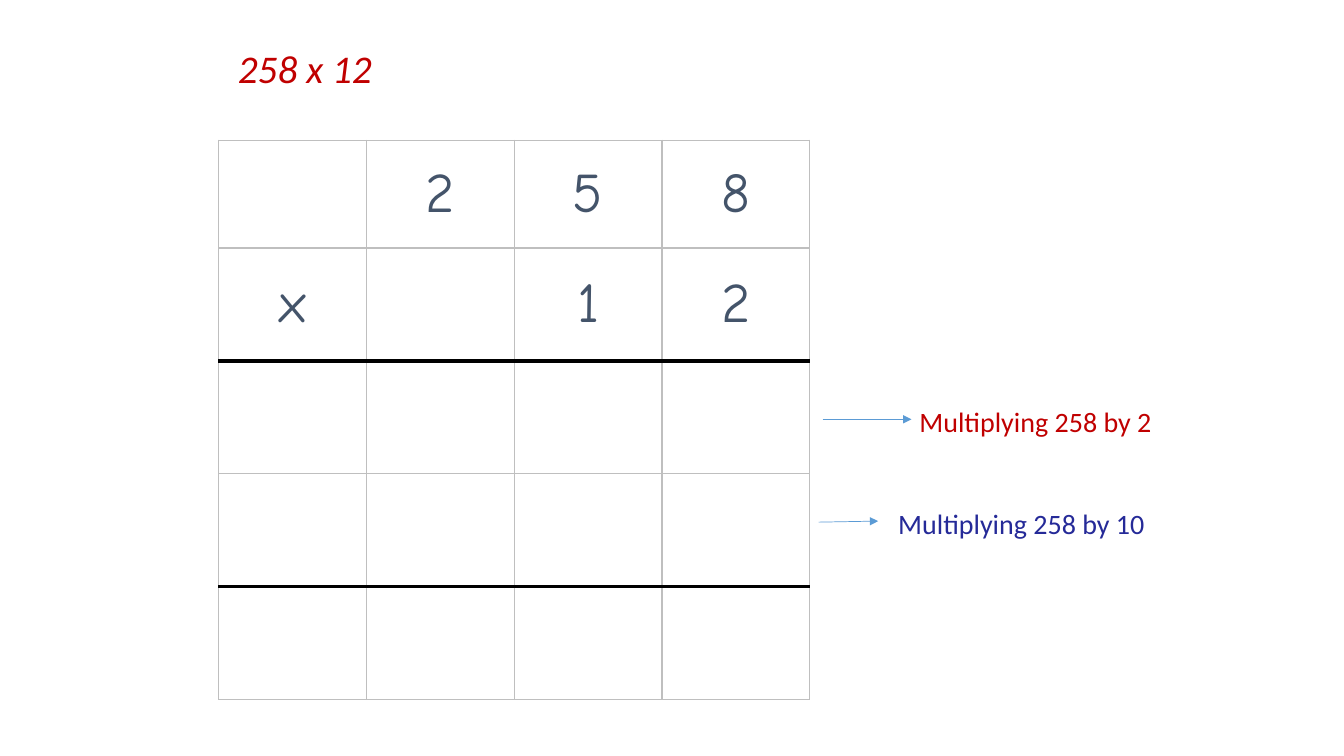
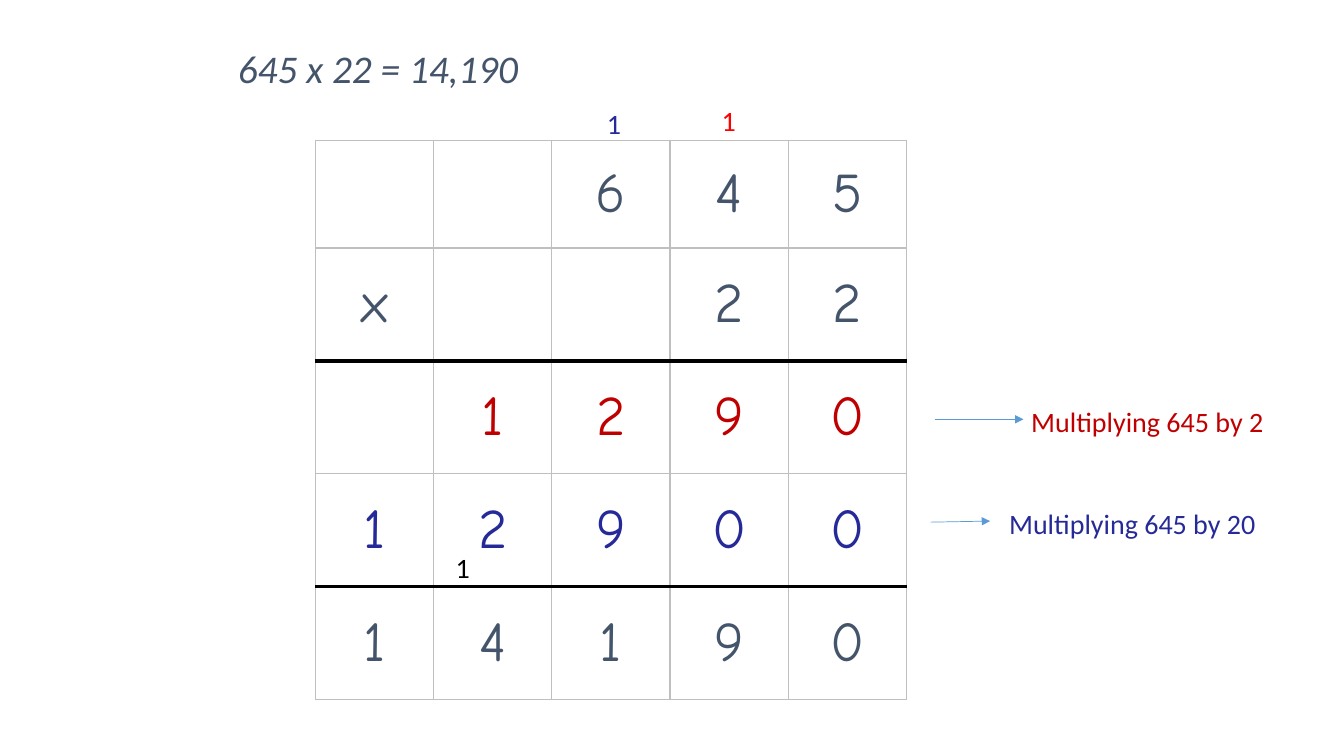
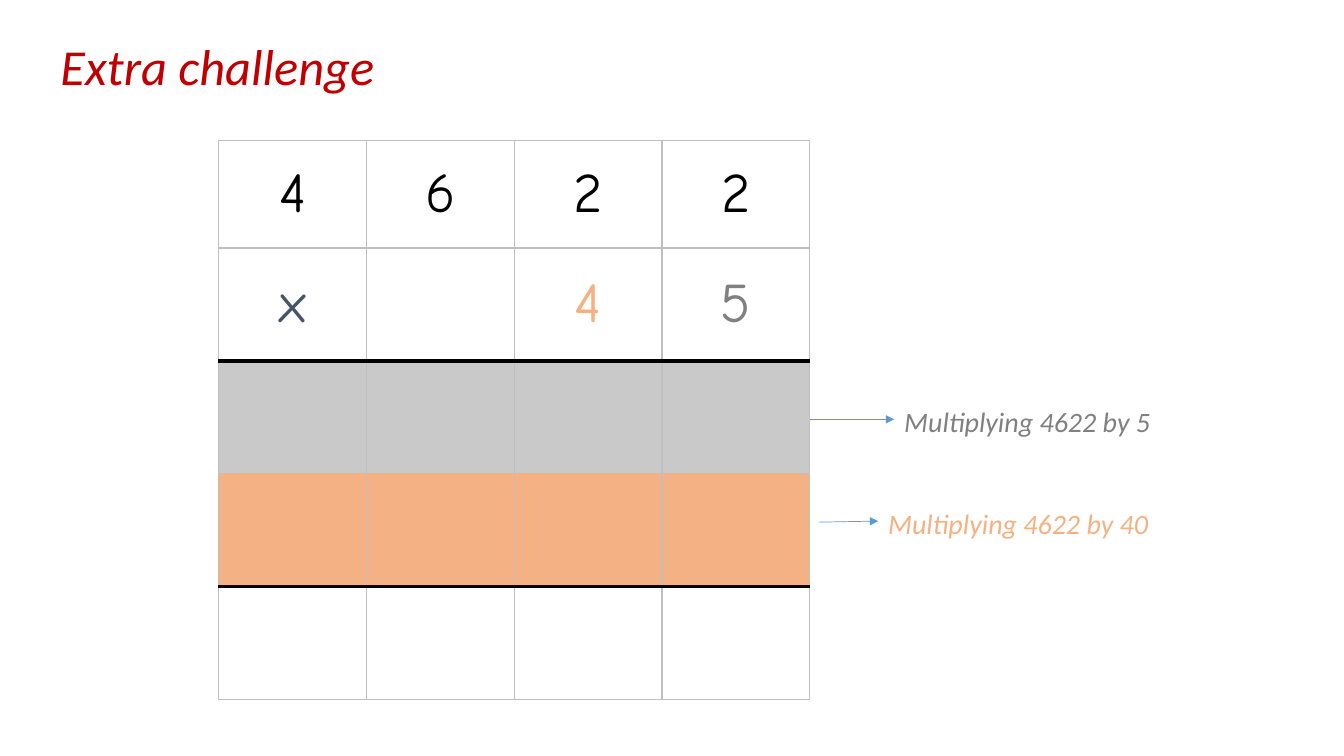
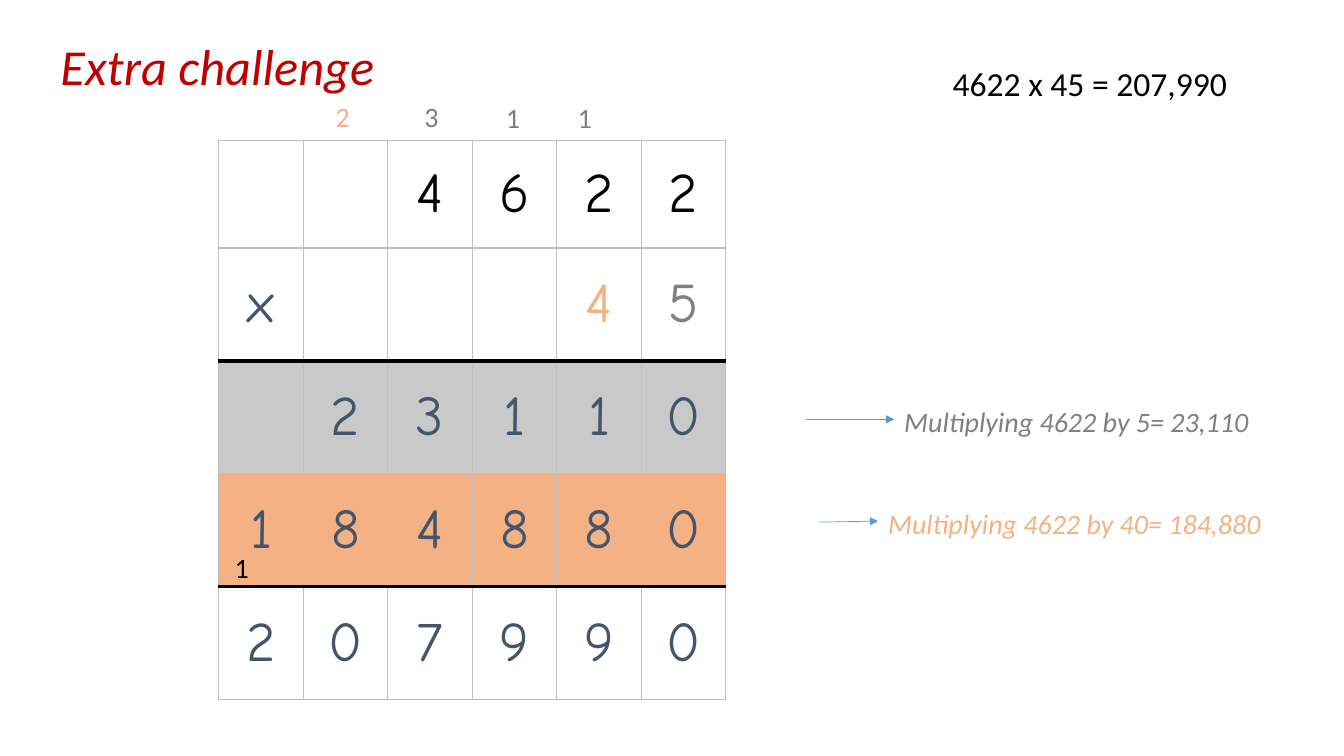
"""Builds four slides of long multiplication worked in grids."""
from lxml import etree
from pptx import Presentation
from pptx import util as u
from pptx.dml import color
from pptx.enum import shapes, text
from pptx.oxml import ns

EMU_PER_PX = 9144
BLACK, SLATE, RED, BRIGHT_RED, BLUE = "000000", "44546A", "C00000", "FF0000", "252A98"
GREY, ORANGE, GREY_FILL, ORANGE_FILL = "808080", "F4B283", "C9C9C9", "F4B183"
GRID, ARROW = "BFBFBF", "5B9BD5"
TEXT_FONT, DIGIT_FONT = "Calibri", "Comic Neue"
TABLE_TOP, ROW_HEIGHTS = 139, (107, 112, 112, 112, 112)
RULED_ROWS = (2, 4)
MULTIPLIER_COLOURS = (SLATE, ORANGE, GREY)


def px(length):
    """Turn px into EMU."""
    return u.Emu(length * EMU_PER_PX)


def rgb(value):
    """Turn a hex string into a colour."""
    return color.RGBColor.from_string(value)


def apply(target, values):
    """Set each named attribute on the target."""
    for name, value in values.items():
        setattr(target, name, value)


def write(paragraph, words, colour, size=20, italic=False, font=TEXT_FONT):
    """Add one formatted run to a paragraph."""
    run = paragraph.add_run()
    run.text = words
    apply(run.font, {"name": font, "size": u.Pt(size), "italic": italic, "bold": False})
    run.font.color.rgb = rgb(colour)


def add_title(slide, words, left, top, width, colour, size):
    """Place and format the slide title."""
    title = slide.shapes.title
    apply(title, {"left": px(left), "top": px(top), "width": px(width), "height": px(74)})
    apply(title.text_frame, {"vertical_anchor": text.MSO_ANCHOR.TOP, "word_wrap": True,
                             "auto_size": text.MSO_AUTO_SIZE.NONE})
    paragraph = title.text_frame.paragraphs[0]
    apply(paragraph, {"alignment": text.PP_ALIGN.LEFT, "line_spacing": 0.9,
                      "space_before": u.Pt(10)})
    write(paragraph, words, colour, size, italic=True)


def add_text(slide, words, left, top, width, colour, size=20, italic=False, height=44, wrap=False):
    """Add a one-line text box."""
    frame = slide.shapes.add_textbox(px(left), px(top), px(width), px(height)).text_frame
    apply(frame, {"word_wrap": wrap, "auto_size": text.MSO_AUTO_SIZE.SHAPE_TO_FIT_TEXT})
    write(frame.paragraphs[0], words, colour, size, italic)


def add_arrow(slide, start, end):
    """Add a thin arrow between two points."""
    arrow = slide.shapes.add_connector(
        shapes.MSO_CONNECTOR.STRAIGHT, *(px(value) for value in start + end))
    arrow.line.color.rgb = rgb(ARROW)
    arrow.line.width = u.Pt(0.5)
    etree.SubElement(arrow.line._get_or_add_ln(), ns.qn("a:tailEnd"), type="triangle")
    etree.SubElement(arrow._element.spPr, ns.qn("a:effectLst"))


def add_note(slide, arrow, words, left, top, width, colour, italic=False):
    """Add an arrow and the remark it points to."""
    add_arrow(slide, *arrow)
    add_text(slide, words, left, top, width, colour, italic=italic, wrap=True)


def add_carries(slide, carries):
    """Add the small carried digits."""
    for digit, left, top, colour in carries:
        add_text(slide, digit, left, top, 34, colour)


def set_borders(cell, row):
    """Draw grey cell borders, with heavy rules above the ruled rows."""
    heavy = {"lnT": row in RULED_ROWS, "lnB": row + 1 in RULED_ROWS}
    properties = cell._tc.get_or_add_tcPr()
    for position, side in enumerate(("lnL", "lnR", "lnT", "lnB")):
        colour, width = (BLACK, 3) if heavy.get(side) else (GRID, 1)
        line = etree.Element(ns.qn(f"a:{side}"), w=str(u.Pt(width)))
        fill = etree.SubElement(line, ns.qn("a:solidFill"))
        etree.SubElement(fill, ns.qn("a:srgbClr"), val=colour)
        properties.insert(position, line)


def fill_cell(cell, digit, colour, fill):
    """Write a centred digit and set the cell background."""
    if fill:
        cell.fill.solid()
        cell.fill.fore_color.rgb = rgb(fill)
    else:
        cell.fill.background()
    cell.vertical_anchor = text.MSO_ANCHOR.MIDDLE
    paragraph = cell.text_frame.paragraphs[0]
    paragraph.alignment = text.PP_ALIGN.CENTER
    if digit.strip():
        write(paragraph, digit, colour, 40, font=DIGIT_FONT)


def add_grid(slide, left, width, rows):
    """Add a digit grid; row colours align right and the first one fills the rest."""
    count = len(rows[0][0])
    table = slide.shapes.add_table(len(rows), count, px(left), px(TABLE_TOP),
                                   px(width), px(sum(ROW_HEIGHTS))).table
    apply(table, {"first_row": False, "horz_banding": False})
    for column in table.columns:
        column.width = px(width) // count
    for row, (digits, colours, fill) in enumerate(rows):
        table.rows[row].height = px(ROW_HEIGHTS[row])
        for column, digit in enumerate(digits):
            cell = table.cell(row, column)
            colour = colours[max(0, column - count + len(colours))]
            fill_cell(cell, digit, colour, fill)
            set_borders(cell, row)


def build_question(slide):
    """Build 258 x 12 to be solved."""
    add_title(slide, "258 x 12", 226, 44, 900, RED, 28)
    blank = ("    ", (SLATE,), None)
    add_grid(slide, 217, 586, [(" 258", (SLATE,), None), ("x 12", (SLATE,), None),
                               blank, blank, blank])
    add_note(slide, ((816, 416), (904, 416)), "Multiplying 258 by 2", 902, 396, 253, RED)
    add_note(slide, ((812, 518), (871, 517)), "Multiplying 258 by 10", 881, 498, 277, BLUE)


def build_answer(slide):
    """Build 645 x 22 solved."""
    add_title(slide, "645 x 22 = 14,190", 226, 44, 900, SLATE, 28)
    add_grid(slide, 313, 586, [("  645", (SLATE,), None), ("x  22", (SLATE,), None),
                               (" 1290", (RED,), None), ("12900", (BLUE,), None),
                               ("14190", (SLATE,), None)])
    add_note(slide, ((927, 416), (1015, 416)), "Multiplying 645 by 2", 1013, 396, 253, RED)
    add_note(slide, ((923, 518), (982, 517)), "Multiplying 645 by 20", 991, 498, 277, BLUE)
    add_carries(slide, [("1", 706, 98, BRIGHT_RED), ("1", 442, 541, BLACK),
                        ("1", 592, 101, BLUE)])


def build_challenge(slide, width, rows, products=("", "")):
    """Build 4622 x 45 with the given grid rows and products."""
    add_title(slide, "Extra challenge", 50, 37, 425, RED, 36)
    first, second = products
    add_note(slide, ((799, 416), (887, 416)), f"Multiplying 4622 by 5{first}",
             887, 396, 414, GREY, italic=True)
    add_note(slide, ((812, 518), (871, 517)), f"Multiplying 4622 by 40{second}",
             871, 498, 414, ORANGE, italic=True)
    styles = [((BLACK,), None), (MULTIPLIER_COLOURS, None), ((SLATE,), GREY_FILL),
              ((SLATE,), ORANGE_FILL), ((SLATE,), None)]
    add_grid(slide, 217, width, [(digits, *style) for digits, style in zip(rows, styles)])


def build_challenge_answer(slide):
    """Build 4622 x 45 solved."""
    build_challenge(slide, 503, ["  4622", "x   45", " 23110", "184880", "207990"],
                    ("= 23,110", "= 184,880"))
    add_carries(slide, [("1", 563, 95, GREY), ("1", 492, 95, GREY), ("3", 411, 94, GREY),
                        ("2", 323, 94, ORANGE), ("1", 223, 541, BLACK)])
    add_text(slide, "4622 x 45 = 207,990", 935, 58, 294, BLACK, 24, height=50)


def main():
    """Build and save the presentation."""
    presentation = Presentation()
    apply(presentation, {"slide_width": px(1333), "slide_height": px(750)})
    layout = presentation.slide_layouts.get_by_name("Title Only")
    question, answer, challenge, solution = (
        presentation.slides.add_slide(layout) for _ in range(4))
    build_question(question)
    build_answer(answer)
    build_challenge(challenge, 586, ["4622", "x 45", "    ", "    ", "    "])
    build_challenge_answer(solution)
    presentation.save("out.pptx")


if __name__ == "__main__":
    main()
